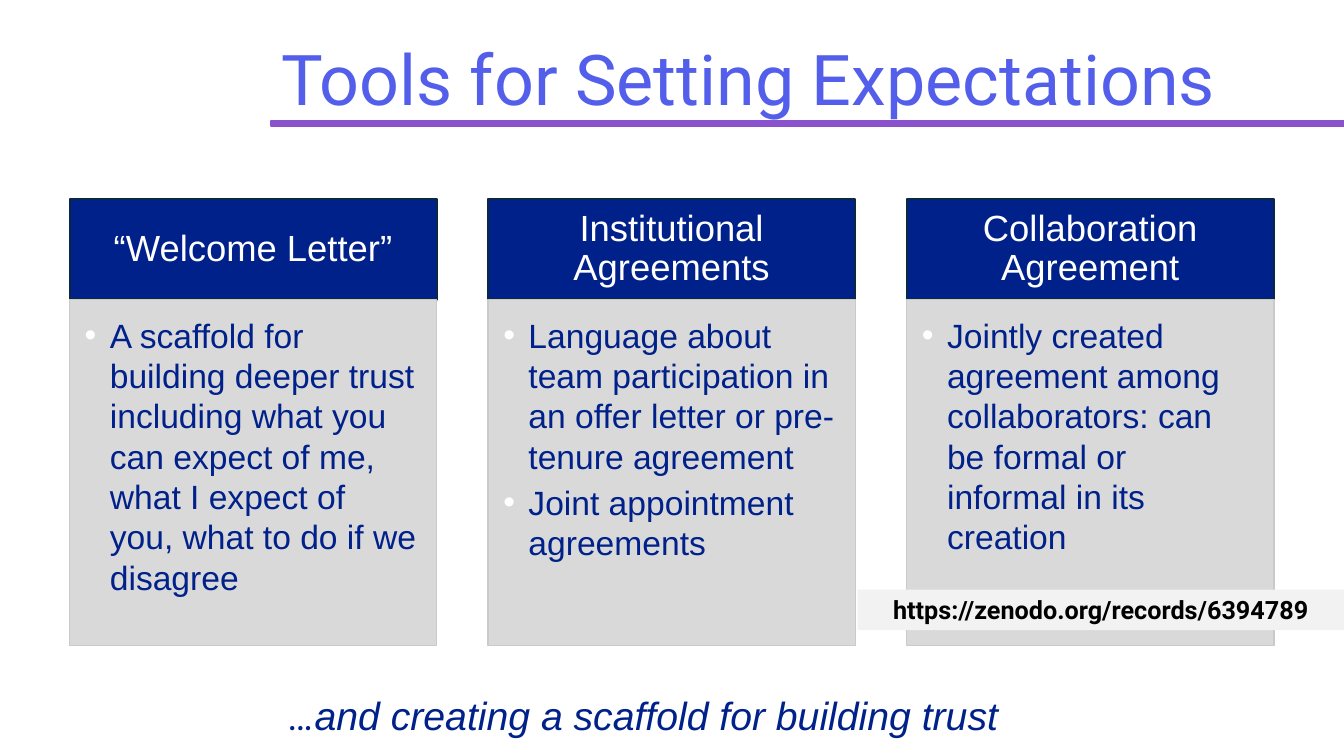
"""Build the slide on tools for setting expectations."""
from dataclasses import dataclass

from lxml import etree
from pptx import Presentation
from pptx import util as u
from pptx.dml.color import RGBColor
from pptx.enum import shapes, text
from pptx.oxml import ns


@dataclass(frozen=True)
class Theme:
    heading_font: str = "Roboto"
    body_font: str = "Arial"
    title: str = "535EEB"
    rule: str = "8A52CD"
    navy: str = "01218A"
    header_edge: str = "0B2741"
    card: str = "D9D9D9"
    card_edge: str = "C9CACD"
    strip: str = "F2F2F2"
    white: str = "FFFFFF"
    black: str = "000000"
    title_size: float = 50
    closing_size: float = 28
    header_size: float = 26
    list_size: float = 24
    link_size: float = 18


class SlideBuilder:
    def __init__(self, page, theme):
        self.page = page
        self.theme = theme

    def apply(self, target, values):
        for name, value in values.items():
            setattr(target, name, value)

    def place(self, shape, left, top, width, height):
        sides = ("left", "top", "width", "height")
        lengths = (left, top, width, height)
        self.apply(shape, {side: u.Pt(length) for side, length in zip(sides, lengths)})

    def frame(self, shape, insets=(7.2, 3.6, 7.2, 3.6), **values):
        sides = ("margin_left", "margin_top", "margin_right", "margin_bottom")
        margins = {side: u.Pt(inset) for side, inset in zip(sides, insets)}
        defaults = {
            "word_wrap": True,
            "auto_size": text.MSO_AUTO_SIZE.NONE,
            "vertical_anchor": text.MSO_ANCHOR.TOP,
        }
        self.apply(shape.text_frame, defaults | margins | values)
        return shape.text_frame

    def add_span(self, para, words, size, color, font=None, **values):
        span = para.add_run()
        span.text = words
        style = {"name": font or self.theme.body_font, "size": u.Pt(size)}
        self.apply(span.font, style | values)
        span.font.color.rgb = RGBColor.from_string(color)

    def title(self, words, *bounds):
        shape = self.page.shapes.title
        self.place(shape, *bounds)
        para = self.frame(shape).paragraphs[0]
        self.apply(para, {"alignment": text.PP_ALIGN.LEFT, "line_spacing": 0.9})
        self.add_span(para, words, self.theme.title_size, self.theme.title,
                      self.theme.heading_font)

    def box(self, fill, edge, edge_width, *bounds):
        shape = self.page.shapes.add_shape(
            shapes.MSO_SHAPE.RECTANGLE, *map(u.Pt, bounds))
        shape.shadow.inherit = False
        shape.fill.solid()
        shape.fill.fore_color.rgb = RGBColor.from_string(fill)
        if edge:
            shape.line.color.rgb = RGBColor.from_string(edge)
            shape.line.width = u.Pt(edge_width)
        else:
            shape.line.fill.background()
        return shape

    def bullet(self, para):
        props = para._p.get_or_add_pPr()
        props.set("marL", str(u.Pt(18)))
        props.set("indent", str(u.Pt(-18)))
        color = etree.SubElement(props, ns.qn("a:buClr"))
        etree.SubElement(color, ns.qn("a:srgbClr"), val=self.theme.white)
        etree.SubElement(props, ns.qn("a:buFont"), typeface=self.theme.body_font)
        etree.SubElement(props, ns.qn("a:buChar"), char="•")

    def header(self, words, *bounds):
        shape = self.box(self.theme.navy, self.theme.header_edge, 1.5, *bounds)
        frame = self.frame(shape, (14.4, 8.6, 14.4, 8.6),
                           vertical_anchor=text.MSO_ANCHOR.MIDDLE)
        para = frame.paragraphs[0]
        self.apply(para, {"alignment": text.PP_ALIGN.CENTER, "line_spacing": 0.9})
        self.add_span(para, words, self.theme.header_size, self.theme.white)

    def bullets(self, items, *bounds):
        shape = self.box(self.theme.card, self.theme.card_edge, 1, *bounds)
        frame = self.frame(shape, (10.8, 10.8, 14.4, 16.6))
        for index, words in enumerate(items):
            para = frame.add_paragraph() if index else frame.paragraphs[0]
            self.bullet(para)
            self.apply(para, {"level": 1, "alignment": text.PP_ALIGN.LEFT,
                              "space_before": u.Pt(3.9 if index else 0)})
            self.add_span(para, words, self.theme.list_size, self.theme.navy)

    def link(self, address, *bounds):
        shape = self.box(self.theme.strip, None, 0, *bounds)
        para = self.frame(shape).paragraphs[0]
        para.alignment = text.PP_ALIGN.CENTER
        self.add_span(para, address, self.theme.link_size, self.theme.black,
                      self.theme.heading_font, bold=True)

    def closing(self, pieces, *bounds):
        shape = self.page.shapes.add_textbox(*map(u.Pt, bounds))
        frame = self.frame(shape, auto_size=text.MSO_AUTO_SIZE.SHAPE_TO_FIT_TEXT)
        for words, font in pieces:
            self.add_span(frame.paragraphs[0], words, self.theme.closing_size,
                          self.theme.navy, font, italic=True)


CARDS = [
    ("“Welcome Letter”",
     ["A scaffold for building deeper trust including what you can expect of me, "
      "what I expect of you, what to do if we disagree"]),
    ("Institutional Agreements",
     ["Language about team participation in an offer letter or pre-tenure agreement",
      "Joint appointment agreements"]),
    ("Collaboration Agreement",
     ["Jointly created agreement among collaborators: can be formal or informal "
      "in its creation"]),
]


def main():
    deck = Presentation()
    deck.slide_width, deck.slide_height = u.Pt(960), u.Pt(540)
    page = deck.slides.add_slide(deck.slide_layouts.get_by_name("Title Only"))
    theme = Theme()
    builder = SlideBuilder(page, theme)
    builder.box(theme.rule, theme.rule, 1.5, 193.7, 86.4, 766.3, 3.6)
    builder.title("Tools for Setting Expectations", 193.7, 28.8, 722.9, 57.6)
    builder.closing([("…", theme.heading_font),
                     ("and creating a scaffold for building trust", theme.body_font)],
                    199.4, 490.3, 560.9, 41)
    left, top, width, pitch = 49.7, 142.3, 262.3, 299
    header_height, list_height = 71.7, 247
    for column, (heading, items) in enumerate(CARDS):
        x = left + column * pitch
        builder.header(heading, x, top, width, header_height)
        builder.bullets(items, x, top + header_height, width, list_height)
    builder.link("https://zenodo.org/records/6394789", 612.7, 421.2, 347.3, 29)
    deck.save("out.pptx")


if __name__ == "__main__":
    main()
